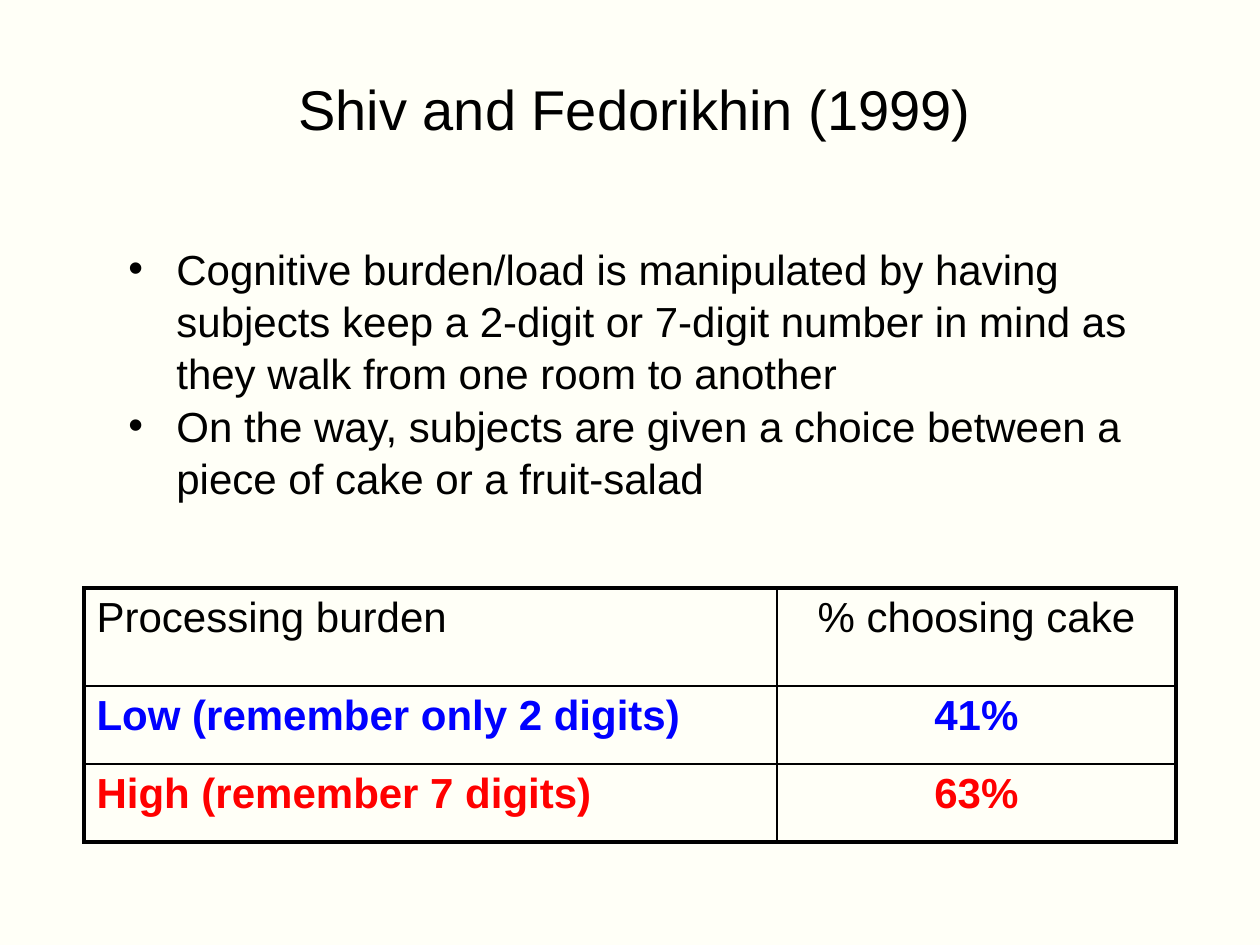
from pptx import Presentation
from pptx.dml.color import RGBColor
from pptx.enum.shapes import MSO_SHAPE as SHAPE
from pptx.enum.text import MSO_ANCHOR as ANCHOR, PP_ALIGN as ALIGN
from pptx.oxml import parse_xml
from pptx.oxml.ns import nsdecls
from pptx.util import Pt

PX = 914400 // 126
PAPER, BLACK, BLUE, RED = "FFFFF7", "000000", "0000FF", "FF0000"


def rgb(value):
    return RGBColor.from_string(value)


def add_run(p, text, size=24, color=BLACK, bold=False):
    r = p.add_run()
    r.text = text
    r.font.name = "Arial"
    r.font.size = Pt(size)
    r.font.bold = bold
    r.font.color.rgb = rgb(color)


prs = Presentation()
prs.slide_width, prs.slide_height = 1260 * PX, 945 * PX
s = prs.slides.add_slide(prs.slide_layouts[6])
s.background.fill.solid()
s.background.fill.fore_color.rgb = rgb(PAPER)

# Title
title = s.shapes.add_textbox(73 * PX, 28 * PX, 1124 * PX, 161 * PX)
tf = title.text_frame
tf.word_wrap = True
tf.vertical_anchor = ANCHOR.MIDDLE
p = tf.paragraphs[0]
p.alignment = ALIGN.CENTER
add_run(p, "Shiv and Fedorikhin (1999)", size=32)

# Bulleted procedure
body = s.shapes.add_shape(SHAPE.RECTANGLE, 116 * PX, 231 * PX, 1031 * PX, 273 * PX)
body.shadow.inherit = False
body.fill.solid()
body.fill.fore_color.rgb = rgb(PAPER)
body.line.fill.background()
tf = body.text_frame
tf.word_wrap = True
tf.vertical_anchor = ANCHOR.TOP
tf.margin_top = 10 * PX
bullets = [
    "Cognitive burden/load is manipulated by having subjects keep a 2-digit "
    "or 7-digit number in mind as they walk from one room to another",
    "On the way, subjects are given a choice between a piece of cake or a fruit-salad",
]
for i, text in enumerate(bullets):
    p = tf.add_paragraph() if i else tf.paragraphs[0]
    p.alignment = ALIGN.LEFT
    p.line_spacing = 1.04
    pPr = p._p.get_or_add_pPr()
    pPr.set("marL", str(48 * PX))
    pPr.set("indent", str(-48 * PX))
    pPr.append(parse_xml(f'<a:buClr {nsdecls("a")}><a:srgbClr val="{BLACK}"/></a:buClr>'))
    pPr.append(parse_xml(f'<a:buFont {nsdecls("a")} typeface="Arial"/>'))
    pPr.append(parse_xml(f'<a:buChar {nsdecls("a")} char="•"/>'))
    add_run(p, text)

# Results table
rows = [
    ("Processing burden", "% choosing cake", BLACK, 98),
    ("Low (remember only 2 digits)", "41%", BLUE, 78),
    ("High (remember 7 digits)", "63%", RED, 78),
]
widths = [693, 399]
frame = s.shapes.add_table(len(rows), len(widths), 84 * PX, 588 * PX,
                           sum(widths) * PX, sum(row[-1] for row in rows) * PX)
table = frame.table
table.first_row = table.horz_banding = False
for col, width in zip(table.columns, widths):
    col.width = width * PX

for i, (burden, share, color, height) in enumerate(rows):
    table.rows[i].height = height * PX
    for j, text in enumerate((burden, share)):
        cell = table.cell(i, j)
        p = cell.text_frame.paragraphs[0]
        p.alignment = ALIGN.CENTER if j else ALIGN.LEFT
        add_run(p, text, color=color, bold=i > 0)

        # Thick outer frame, thin inner rules
        outer = {"L": j == 0, "R": j == len(widths) - 1,
                 "T": i == 0, "B": i == len(rows) - 1}
        tcPr = cell._tc.get_or_add_tcPr()
        for side, is_outer in outer.items():
            width = Pt(2.25 if is_outer else 1)
            tcPr.append(parse_xml(
                f'<a:ln{side} {nsdecls("a")} w="{width}"><a:solidFill>'
                f'<a:srgbClr val="{BLACK}"/></a:solidFill></a:ln{side}>'))
        cell.fill.solid()
        cell.fill.fore_color.rgb = rgb(PAPER)

prs.save("out.pptx")
